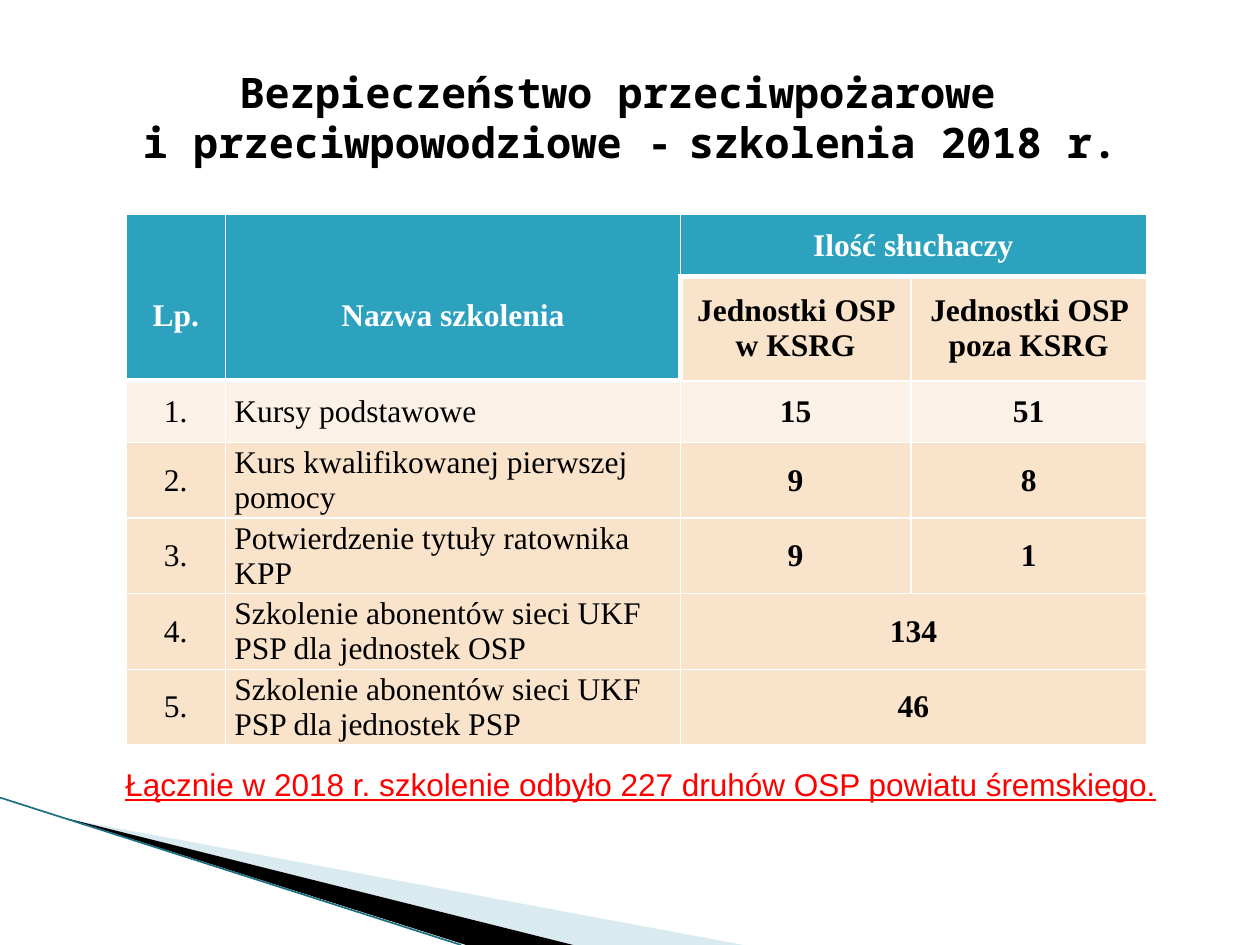
"""Build the slide on fire and flood safety training in 2018."""
from dataclasses import dataclass

from lxml import etree
from pptx import Presentation, util as u
from pptx.dml.color import RGBColor
from pptx.enum import shapes, text
from pptx.oxml.ns import qn

WIDTH, HEIGHT = u.Inches(10), u.Inches(7.5)
COLORS = {
    "black": "000000", "white": "FFFFFF", "red": "FF0000", "header": "2DA2BF",
    "cream": "FCF1E7", "peach": "F9E3CB", "pale": "A0CBDC", "edge": "1B6F82",
}
SERIF, MONO, SANS = "Times New Roman", "Noto Sans Mono", "Arial"
COLUMNS = (0.79, 3.61, 1.83, 1.87)
ROWS = (0.49, 0.83, 0.49) + (0.6,) * 4
HEADER_ROWS = 2
SIDES = {"L": (0, -1), "R": (0, 1), "T": (-1, 0), "B": (1, 0)}


@dataclass(frozen=True)
class Training:
    name: str
    counts: tuple[str, ...]


@dataclass(frozen=True)
class Wedge:
    points: tuple[tuple[float, float], ...]
    color: str
    opacity: int = 100


TRAININGS = (
    Training("Kursy podstawowe", ("15", "51")),
    Training("Kurs kwalifikowanej pierwszej pomocy", ("9", "8")),
    Training("Potwierdzenie tytuły ratownika KPP", ("9", "1")),
    Training("Szkolenie abonentów sieci UKF PSP dla jednostek OSP", ("134",)),
    Training("Szkolenie abonentów sieci UKF PSP dla jednostek PSP", ("46",)),
)
WEDGES = (
    Wedge(((0.055, 0.867), (0.59, 1), (0.456, 1)), "pale", 40),
    Wedge(((0.053, 0.866), (0.455, 1), (0.37, 1)), "black"),
)


def rgb(name: str) -> RGBColor:
    return RGBColor.from_string(COLORS[name])


def place(box, left: float, top: float, width: float, height: float) -> None:
    """Position a box by shares of the slide's size."""
    box.left, box.top = int(left * WIDTH), int(top * HEIGHT)
    box.width, box.height = int(width * WIDTH), int(height * HEIGHT)


def style(font, name: str, size: float, color: str, bold: bool = False) -> None:
    font.name, font.size, font.bold = name, u.Pt(size), bold
    font.color.rgb = rgb(color)


def draw_wedge(page, wedge: Wedge) -> None:
    points = [(int(x * WIDTH), int(y * HEIGHT)) for x, y in wedge.points]
    builder = page.shapes.build_freeform(*points[0])
    builder.add_line_segments(points[1:], close=True)
    shape = builder.convert_to_shape()
    shape.shadow.inherit = False
    shape.fill.solid()
    shape.fill.fore_color.rgb = rgb(wedge.color)
    shape.line.fill.background()
    if wedge.opacity < 100:
        tint = shape.fill._xPr.find(".//" + qn("a:srgbClr"))
        etree.SubElement(tint, qn("a:alpha"), val=str(wedge.opacity * 1000))


def draw_edge(page) -> None:
    line = page.shapes.add_connector(
        shapes.MSO_CONNECTOR.STRAIGHT, 0, int(0.844 * HEIGHT), int(0.366 * WIDTH), HEIGHT)
    line.line.color.rgb = rgb("edge")
    line.line.width = u.Pt(0.95)
    etree.SubElement(line._element.spPr, qn("a:effectLst"))


def draw_title(page) -> None:
    title = page.shapes.title
    place(title, 0.05, 0.04, 0.9, 1 / 6)
    frame = title.text_frame
    frame.vertical_anchor = text.MSO_ANCHOR.MIDDLE
    frame.auto_size = text.MSO_AUTO_SIZE.NONE
    para = frame.paragraphs[0]
    para.alignment = text.PP_ALIGN.CENTER
    para.add_run().text = "Bezpieczeństwo przeciwpożarowe "
    para.add_line_break()
    for words in ("i przeciwpowodziowe -", " ", "szkolenia 2018 r."):
        para.add_run().text = words
    for span in para.runs:
        style(span.font, MONO, 16 if span.text == " " else 24, "black", True)


def is_header(row: int, column: int) -> bool:
    return row == 0 or (row == 1 and column < 2)


def draw_borders(cell, row: int, column: int) -> None:
    """Draw white borders, thick where header and body cells meet."""
    for side, (down, across) in SIDES.items():
        near = row + down, column + across
        inside = 0 <= near[0] < len(ROWS) and 0 <= near[1] < len(COLUMNS)
        thick = inside and is_header(row, column) != is_header(*near)
        border = etree.SubElement(cell._tc.get_or_add_tcPr(), qn(f"a:ln{side}"),
                                  w=str(u.Pt(3 if thick else 1)))
        fill = etree.SubElement(border, qn("a:solidFill"))
        etree.SubElement(fill, qn("a:srgbClr"), val=COLORS["white"])


def fill_cell(cell, row: int, column: int, words: str) -> None:
    header = is_header(row, column)
    draw_borders(cell, row, column)
    cell.fill.solid()
    cell.fill.fore_color.rgb = rgb("header" if header else "cream" if row == 2 else "peach")
    cell.margin_left = cell.margin_right = u.Inches(0.07)
    cell.margin_top = u.Inches(0.29 if header and column < 2 else 0)
    cell.margin_bottom = 0
    cell.vertical_anchor = text.MSO_ANCHOR.MIDDLE
    cell.text = words
    para = cell.text_frame.paragraphs[0]
    left = column == 1 and not header
    para.alignment = text.PP_ALIGN.LEFT if left else text.PP_ALIGN.CENTER
    style(para.font, SERIF, 18, "white" if header else "black", header or column > 1)


def draw_table(page) -> None:
    table = page.shapes.add_table(
        len(ROWS), len(COLUMNS), int(0.1 * WIDTH), int(0.227 * HEIGHT),
        u.Inches(sum(COLUMNS)), u.Inches(sum(ROWS))).table
    for column, width in zip(table.columns, COLUMNS):
        column.width = u.Inches(width)
    for row, height in zip(table.rows, ROWS):
        row.height = u.Inches(height)
    content = [("Lp.", "Nazwa szkolenia", "Ilość słuchaczy"),
               ("", "", "Jednostki OSP w KSRG", "Jednostki OSP poza KSRG")]
    content += [(f"{number}.", item.name, *item.counts)
                for number, item in enumerate(TRAININGS, 1)]
    for row, words in enumerate(content):
        for column in range(len(COLUMNS)):
            fill_cell(table.cell(row, column), row, column,
                      words[column] if column < len(words) else "")
        if len(words) < len(COLUMNS):
            table.cell(row, 2).merge(table.cell(row, 3))
    for column in range(2):
        table.cell(0, column).merge(table.cell(HEADER_ROWS - 1, column))


def draw_summary(page) -> None:
    box = page.shapes.add_textbox(0, 0, 0, 0)
    place(box, 0.055, 0.803, 0.907, 0.095)
    box.text_frame.word_wrap = True
    para = box.text_frame.paragraphs[0]
    para.text = "Łącznie w 2018 r. szkolenie odbyło 227 druhów OSP powiatu śremskiego."
    para.alignment = text.PP_ALIGN.CENTER
    style(para.font, SANS, 18, "red")
    para.font.underline = True


def main() -> None:
    deck = Presentation()
    deck.slide_width, deck.slide_height = WIDTH, HEIGHT
    page = deck.slides.add_slide(deck.slide_layouts[5])
    for wedge in WEDGES:
        draw_wedge(page, wedge)
    draw_edge(page)
    draw_table(page)
    draw_title(page)
    draw_summary(page)
    deck.save("out.pptx")


if __name__ == "__main__":
    main()
